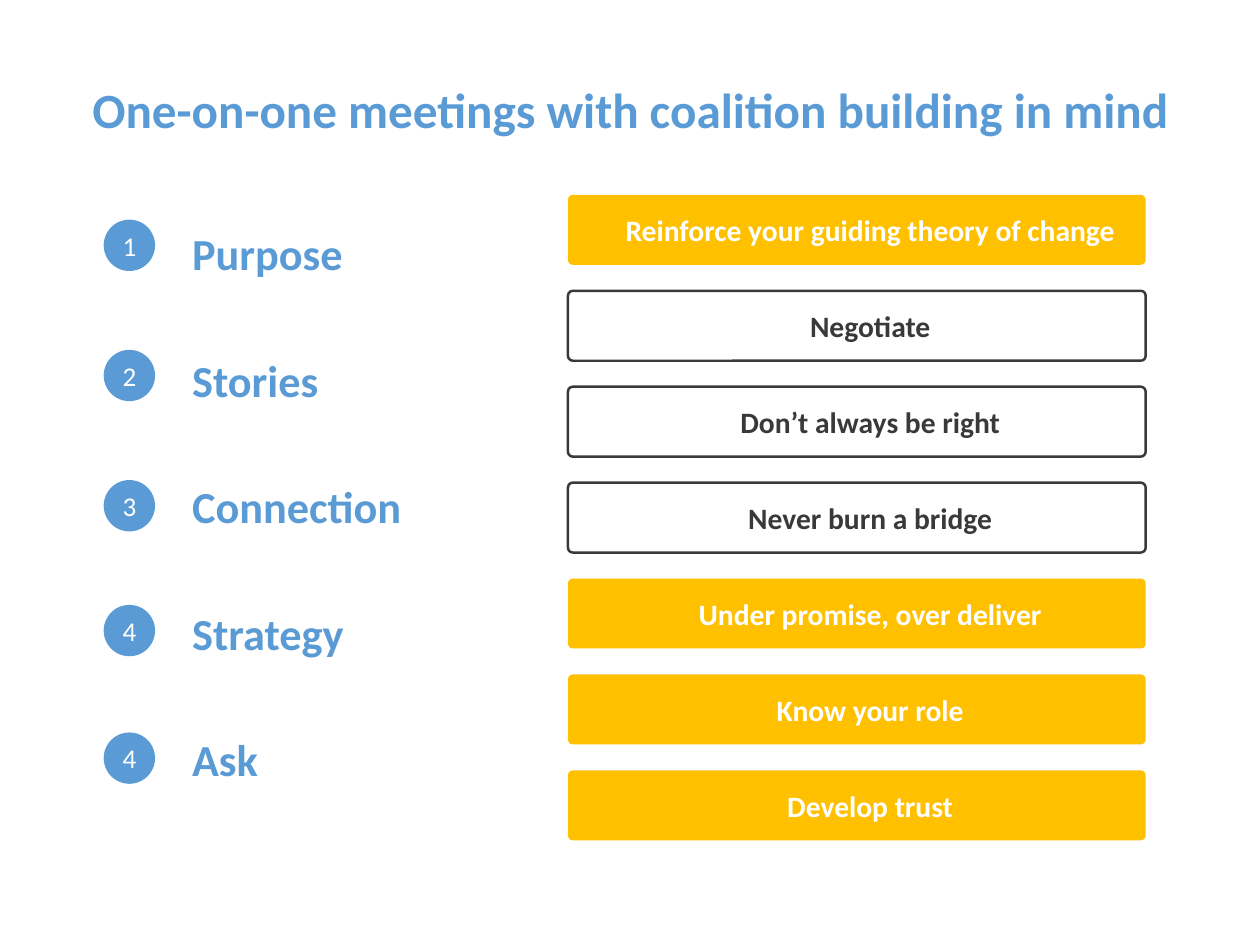
import pptx
import pptx.util
from pptx.dml.color import RGBColor
from pptx.enum.shapes import MSO_SHAPE
from pptx.enum.text import MSO_ANCHOR, PP_ALIGN
from pptx.util import Inches, Pt

BLUE = RGBColor(0x5B, 0x9B, 0xD5)
GOLD = RGBColor(0xFF, 0xC0, 0x00)
DARK = RGBColor(0x3A, 0x38, 0x38)
WHITE = RGBColor(0xFF, 0xFF, 0xFF)


def write(paragraph, text, size, color, bold, align):
    paragraph.text = text
    paragraph.alignment = align
    font_format = {"name": "Calibri", "size": Pt(size), "bold": bold}
    for attribute, value in font_format.items():
        setattr(paragraph.font, attribute, value)
    paragraph.font.color.rgb = color


def add_label_shape(preset, left, top, width, height, fill):
    shape = slide.shapes.add_shape(
        preset, Inches(left), Inches(top), Inches(width), Inches(height))
    shape.shadow.inherit = False
    if fill is None:
        shape.fill.background()
        shape.line.color.rgb = DARK
        shape.line.width = Pt(2)
    else:
        shape.fill.solid()
        shape.fill.fore_color.rgb = fill
        shape.line.fill.background()
    shape.text_frame.vertical_anchor = MSO_ANCHOR.MIDDLE
    return shape


presentation = pptx.Presentation()
presentation.slide_width = Inches(14.22)
presentation.slide_height = Inches(10.67)
slide = presentation.slides.add_slide(presentation.slide_layouts[6])

# Principles, highlighted in gold or outlined
principles = [
    ("Reinforce your guiding theory of change", True),
    ("Negotiate", False),
    ("Don’t always be right", False),
    ("Never burn a bridge", False),
    ("Under promise, over deliver", True),
    ("Know your role", True),
    ("Develop trust", True),
]
for row, (principle, highlighted) in enumerate(principles):
    bar = add_label_shape(MSO_SHAPE.ROUNDED_RECTANGLE, 6.41, 2.2 + row * 1.083,
                          6.52, 0.79, GOLD if highlighted else None)
    bar.adjustments[0] = 0.07
    bar.text_frame.margin_left = Inches(0.4)
    bar.text_frame.word_wrap = True
    write(bar.text_frame.paragraphs[0], principle, 24,
          WHITE if highlighted else DARK, True, PP_ALIGN.CENTER)

# Meeting steps
steps = slide.shapes.add_textbox(
    Inches(2.07), Inches(2.39), Inches(2.96), Inches(6.6)).text_frame
steps.word_wrap = True
for index, step in enumerate(["Purpose", "Stories", "Connection", "Strategy", "Ask"]):
    line = steps.add_paragraph() if index else steps.paragraphs[0]
    write(line, step, 36, BLUE, True, PP_ALIGN.LEFT)
    line.line_spacing = 1.2
    line.space_before = Pt(51 if index else 0)

# Step numbers
for number, top in [("1", 2.48), ("2", 3.95), ("3", 5.42), ("4", 6.83), ("4", 8.27)]:
    badge = add_label_shape(MSO_SHAPE.OVAL, 1.17, top, 0.58, 0.58, BLUE)
    write(badge.text_frame.paragraphs[0], number, 22, WHITE, False, PP_ALIGN.CENTER)

# Title
title = slide.shapes.add_textbox(
    Inches(0.92), Inches(0.85), Inches(12.39), Inches(0.77)).text_frame
title.word_wrap = True
write(title.paragraphs[0], "One-on-one meetings with coalition building in mind",
      40, BLUE, True, PP_ALIGN.CENTER)

presentation.save("out.pptx")
